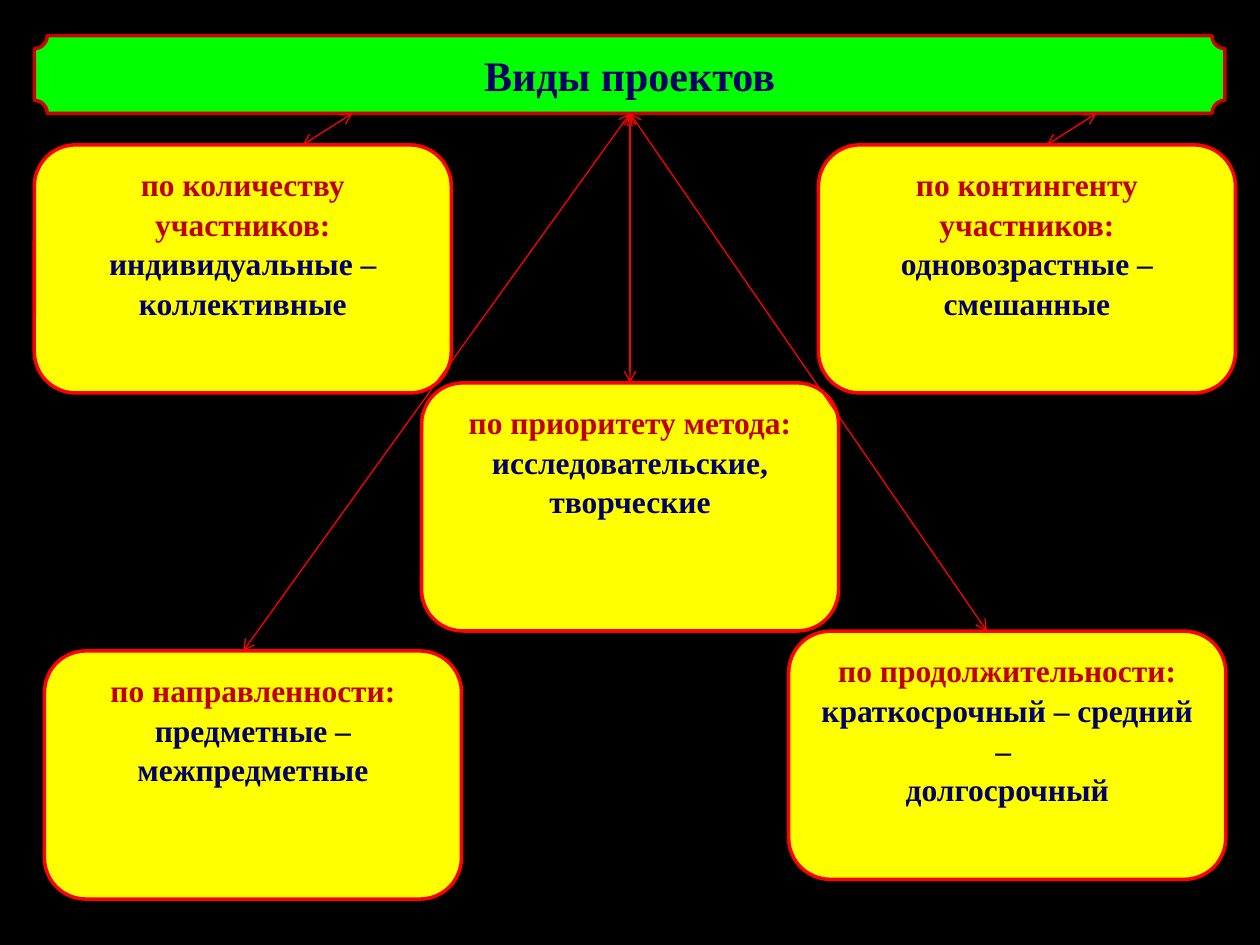
from typing import NamedTuple

from lxml import etree
from pptx import Presentation
from pptx.dml.color import RGBColor
from pptx.enum.shapes import MSO_CONNECTOR, MSO_SHAPE
from pptx.enum.text import MSO_ANCHOR, PP_ALIGN
from pptx.oxml.ns import qn
from pptx.util import Pt

PLAQUE = MSO_SHAPE.PLAQUE
ROUND = MSO_SHAPE.FLOWCHART_ALTERNATE_PROCESS
LINE = MSO_CONNECTOR.STRAIGHT
CENTER = PP_ALIGN.CENTER
TOP, MIDDLE = MSO_ANCHOR.TOP, MSO_ANCHOR.MIDDLE

FONT = "Times New Roman"
BLACK, GREEN, YELLOW = "000000", "00FF00", "FFFF00"
RED, DARK, CRIMSON, NAVY = "FF0000", "CC0000", "C00000", "000066"


class Box(NamedTuple):
    left: float
    top: float
    width: float
    height: float


class Card(NamedTuple):
    box: Box
    head: str
    lines: list[str]
    start: float  # arrow x at the title bar
    end: float  # arrow x at the card


WIDE, HIGH = 238.3, 141.8
BAR = Box(19.6, 20.4, 680.4, 44.4)
BASE = BAR.top + BAR.height
CARDS = [
    Card(Box(19.6, 82.8, WIDE, HIGH), "по количеству участников: ",
         ["индивидуальные – коллективные"], 201.3, 173),
    Card(Box(467.7, 82.8, WIDE, HIGH), "по контингенту участников: ",
         ["одновозрастные – смешанные"], 626.5, 598.2),
    Card(Box(240.9, 218.8, WIDE, HIGH), "по приоритету метода: ",
         ["исследовательские, творческие"], 360, 360),
    Card(Box(25.4, 372, WIDE, HIGH), "по направленности: ",
         ["предметные – межпредметные"], 360, 139),
    Card(Box(450.7, 360.7, 249.8, HIGH), "по продолжительности: ",
         ["краткосрочный – средний – ", "долгосрочный"], 360, 564),
]


def color(code: str) -> RGBColor:
    return RGBColor.from_string(code)


def add_box(slide, kind, box: Box, fill: str, edge: str, anchor):
    shape = slide.shapes.add_shape(kind, *(Pt(n) for n in box))
    shape.shadow.inherit = False
    shape.fill.solid()
    shape.fill.fore_color.rgb = color(fill)
    shape.line.color.rgb = color(edge)
    shape.line.width = Pt(2)
    shape.text_frame.word_wrap = True
    shape.text_frame.vertical_anchor = anchor
    return shape.text_frame


def style(para, size: float) -> None:
    para.alignment = CENTER
    para.font.name = FONT
    para.font.size = Pt(size)
    para.font.bold = True


def add_run(para, text: str, code: str) -> None:
    run = para.add_run()
    run.text = text
    run.font.color.rgb = color(code)


def add_card(slide, card: Card) -> None:
    frame = add_box(slide, ROUND, card.box, YELLOW, RED, TOP)
    for i, text in enumerate(card.lines):
        para = frame.add_paragraph() if i else frame.paragraphs[0]
        style(para, 18)
        para.line_spacing = 1.05
        if i == 0:
            add_run(para, card.head, CRIMSON)
        add_run(para, text, NAVY)


def add_arrow(slide, card: Card) -> None:
    ends = (card.start, BASE, card.end, card.box.top)
    arrow = slide.shapes.add_connector(LINE, *(Pt(n) for n in ends))
    arrow.line.color.rgb = color(RED)
    arrow.line.width = Pt(0.75)
    props = arrow._element.spPr
    edge = props.find(qn("a:ln"))
    for tag in ("a:headEnd", "a:tailEnd"):
        etree.SubElement(edge, qn(tag), type="arrow")
    etree.SubElement(props, qn("a:effectLst"))


def main() -> None:
    deck = Presentation()
    deck.slide_width, deck.slide_height = Pt(720), Pt(540)
    slide = deck.slides.add_slide(deck.slide_layouts[6])
    slide.background.fill.solid()
    slide.background.fill.fore_color.rgb = color(BLACK)

    # Title bar
    title = add_box(slide, PLAQUE, BAR, GREEN, DARK, MIDDLE).paragraphs[0]
    style(title, 24)
    add_run(title, "Виды проектов", NAVY)

    # Cards, then the arrows over them
    for card in CARDS:
        add_card(slide, card)
    for card in CARDS:
        add_arrow(slide, card)

    deck.save("out.pptx")


if __name__ == "__main__":
    main()
